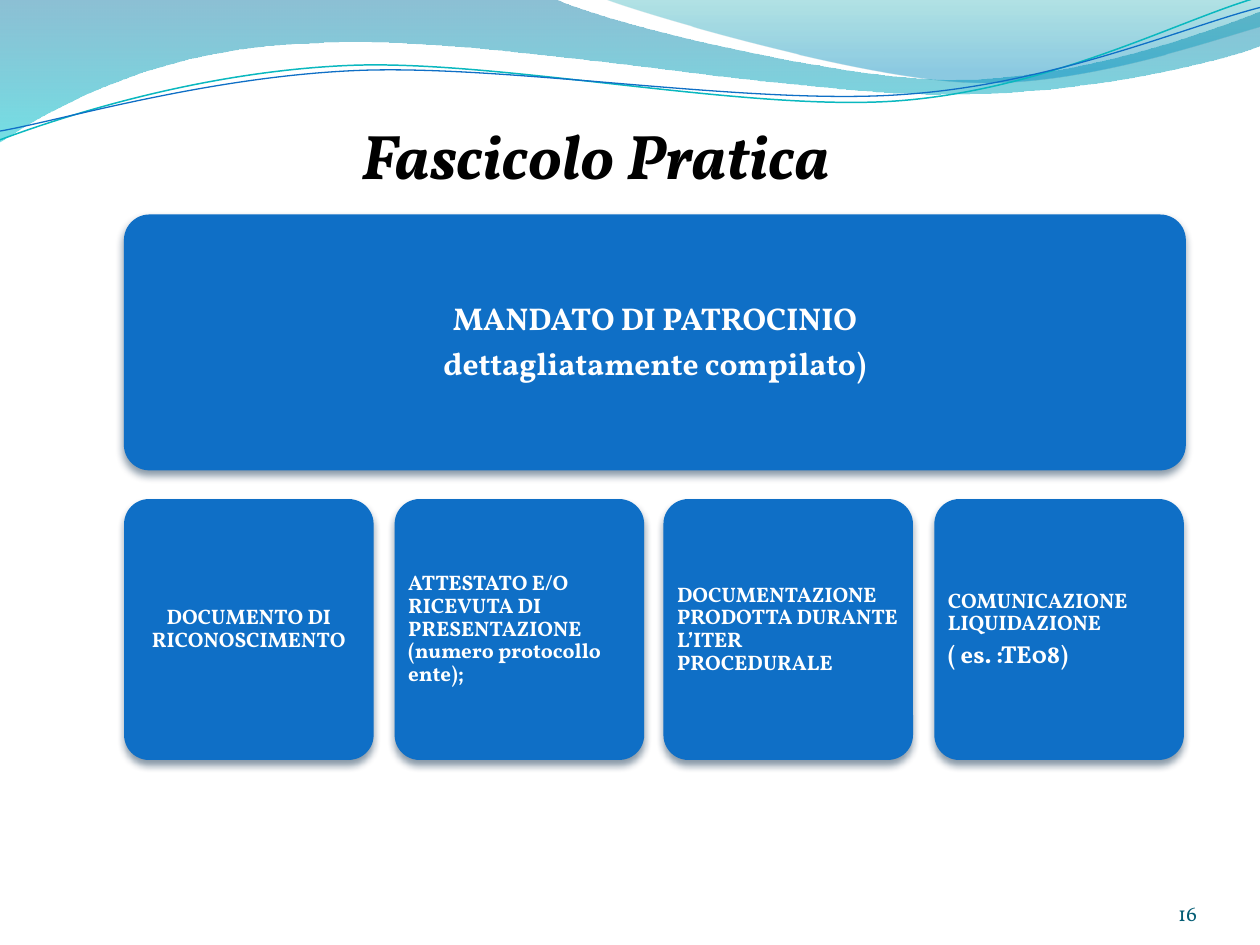
import math

import pptx
import pptx.dml.color
import pptx.enum.shapes
import pptx.enum.text
import pptx.oxml
import pptx.oxml.ns
import pptx.util

Pt = pptx.util.Pt
RGBColor = pptx.dml.color.RGBColor
Align = pptx.enum.text.PP_ALIGN
Anchor = pptx.enum.text.MSO_ANCHOR
qn = pptx.oxml.ns.qn

BLUE = RGBColor(0x0F, 0x6F, 0xC6)
TEAL = RGBColor(0x0A, 0xB8, 0xBF)
WHITE = RGBColor(0xFF, 0xFF, 0xFF)
BLACK = RGBColor(0x00, 0x00, 0x00)
PAGE = RGBColor(0x04, 0x5D, 0x75)
SHADOW = RGBColor(0x04, 0x27, 0x47)
SEA = RGBColor(0x00, 0x74, 0xA1)
CYAN = RGBColor(0x00, 0xC6, 0xCF)
GREEN = RGBColor(0x00, 0xA1, 0xA9)
AZURE = RGBColor(0x00, 0x8B, 0xBF)


def color_xml(color, alpha):
    return f'<a:srgbClr val="{color}"><a:alpha val="{alpha * 1000}"/></a:srgbClr>'


def drawing_xml(body):
    tag, rest = body.split(" ", 1)
    return pptx.oxml.parse_xml(f'{tag} {pptx.oxml.ns.nsdecls("a")} {rest}')


def turn(part, degrees, center):
    cos, sin = math.cos(math.radians(degrees)), math.sin(math.radians(degrees))
    cx, cy = center
    turned = []
    for x, y in zip(part[::2], part[1::2]):
        dx, dy = x - cx, y - cy
        turned += [cx + dx * cos - dy * sin, cy + dx * sin + dy * cos]
    return turned


def write(tf, paragraphs, size=12, color=WHITE, bold=True, italic=False,
          align=Align.LEFT, anchor=Anchor.MIDDLE, insets=(0, 0, 0, 0),
          font="Vollkorn", spacing=None, after=0):
    tf.word_wrap = True
    tf.vertical_anchor = anchor
    tf.margin_left, tf.margin_top, tf.margin_right, tf.margin_bottom = map(Pt, insets)
    for i, item in enumerate(paragraphs):
        text, points = item if isinstance(item, tuple) else (item, size)
        p = tf.paragraphs[0] if i == 0 else tf.add_paragraph()
        p.alignment = align
        p.line_spacing = spacing
        p.space_after = Pt(points * after)
        r = p.add_run()
        r.text = text
        r.font.name = font
        r.font.size = Pt(points)
        r.font.bold = bold
        r.font.italic = italic
        r.font.color.rgb = color


class Deck:
    def __init__(self, width, height):
        self.prs = pptx.Presentation()
        self.prs.slide_width, self.prs.slide_height = Pt(width), Pt(height)
        self.s = self.prs.slides.add_slide(self.prs.slide_layouts[6])

    def freeform(self, path, close):
        points = [(Pt(x), Pt(y)) for part in path for x, y in zip(part[::2], part[1::2])]
        fb = self.s.shapes.build_freeform(*points[0], scale=1.0)
        fb.add_line_segments(points[1:], close=close)
        sp = fb.convert_to_shape()
        sp.shadow.inherit = False
        lines = iter(list(sp.element.iter(qn("a:lnTo"))))
        for part in path[1:]:
            steps = [next(lines) for _ in range(len(part) // 2)]
            if len(steps) == 3:
                bezier = drawing_xml("<a:cubicBezTo />")
                steps[0].addprevious(bezier)
                for step in steps:
                    bezier.append(step[0])
                    step.getparent().remove(step)
        return sp

    def wave(self, path, stops):
        sp = self.freeform(path, True)
        sp.line.fill.background()
        sp.fill.background()
        stop_xml = "".join(f'<a:gs pos="{pos * 1000}">{color_xml(color, alpha)}</a:gs>'
                           for pos, color, alpha in stops)
        grad = drawing_xml(f'<a:gradFill rotWithShape="1"><a:gsLst>{stop_xml}</a:gsLst>'
                           '<a:lin ang="5400000" scaled="0"/></a:gradFill>')
        sp.element.spPr.replace(sp.element.spPr.find(qn("a:noFill")), grad)

    def curve(self, path, color, width, center, tilt=2.7):
        sp = self.freeform([turn(part, tilt, center) for part in path], False)
        sp.rotation = 360 - tilt
        sp.fill.background()
        sp.line.color.rgb = color
        sp.line.width = Pt(width)

    def text(self, box, text, **style):
        sp = self.s.shapes.add_textbox(*map(Pt, box))
        write(sp.text_frame, [text], **style)

    def card(self, box, paragraphs, inset, **style):
        kind = pptx.enum.shapes.MSO_SHAPE.ROUNDED_RECTANGLE
        sp = self.s.shapes.add_shape(kind, *map(Pt, box))
        sp.adjustments[0] = 0.1
        sp.fill.solid()
        sp.fill.fore_color.rgb = BLUE
        sp.line.fill.background()
        sp.shadow.inherit = False
        sp.element.spPr.find(qn("a:effectLst")).append(drawing_xml(
            f'<a:outerShdw blurRad="{Pt(4.5)}" dist="{Pt(3)}" dir="5400000" '
            f'rotWithShape="0">{color_xml(SHADOW, 48)}</a:outerShdw>'))
        write(sp.text_frame, paragraphs, insets=(inset,) * 4,
              spacing=0.9, after=0.35, **style)


def main():
    deck = Deck(720, 540)
    deck.wave([(0, 0), (316.8, -0.7),
               (342.7, 12.2, 478.1, 45.4, 545.8, 45.4),
               (614.2, 45.4, 689.8, 18.7, 720, 6.5), (720.7, 25.9),
               (707.8, 31.7, 626.4, 54.7, 537.1, 54),
               (447.8, 54, 275, 20.2, 185, 24.5),
               (92.9, 25.9, 33.1, 59.8, -0.7, 81.4)],
              [(0, SEA, 45), (100, CYAN, 55)])
    deck.wave([(344.9, -0.7), (366.5, 7.9, 491, 44.6, 553.7, 46.8),
               (616.3, 49.7, 691.9, 23, 720, 15.1), (720, 0)],
              [(0, GREEN, 30), (80, AZURE, 45)])
    deck.curve([(0, 79.9), (34.6, 67, 113.8, 41, 199.4, 37.4),
                (284.4, 33.8, 427, 64.1, 513.4, 57.6),
                (599.8, 51.1, 675.4, 10.8, 718.6, -1.4)], TEAL, 0.85, (359.3, 41.4))
    deck.curve([(0, 74.9), (33.8, 69.1, 118.1, 43.9, 203.8, 40.3),
                (290.2, 36.7, 429.8, 60.5, 516.2, 54),
                (601.9, 48.2, 677.5, 15.1, 720, 4.3)], BLUE, 0.75, (359.6, 42.5))

    deck.text((25.2, 58.1, 595.4, 51.8), "Fascicolo Pratica", size=36, color=BLACK,
              italic=True, align=Align.CENTER, anchor=Anchor.BOTTOM,
              insets=(34.5, 3.6, 0, 0))

    deck.card((70.8, 122.6, 606.8, 146.2),
              ["MANDATO DI PATROCINIO", "dettagliatamente compilato)"],
              5, size=18, align=Align.CENTER)
    documents = [
        (70.9, ["DOCUMENTO DI RICONOSCIMENTO"], Align.CENTER),
        (225.5, ["ATTESTATO E/O RICEVUTA DI PRESENTAZIONE (numero protocollo ente);"],
         Align.LEFT),
        (379.1, ["DOCUMENTAZIONE PRODOTTA DURANTE L’ITER PROCEDURALE"], Align.LEFT),
        (533.9, ["COMUNICAZIONE LIQUIDAZIONE", ("( es. :TE08)", 14)], Align.LEFT),
    ]
    for left, paragraphs, align in documents:
        deck.card((left, 285.2, 142.6, 149.1), paragraphs, 3.6, align=align)

    deck.text((624.2, 500.4, 59.8, 28.8), "16", color=PAGE, bold=False,
              align=Align.RIGHT, anchor=Anchor.BOTTOM)
    deck.prs.save("out.pptx")


if __name__ == "__main__":
    main()
